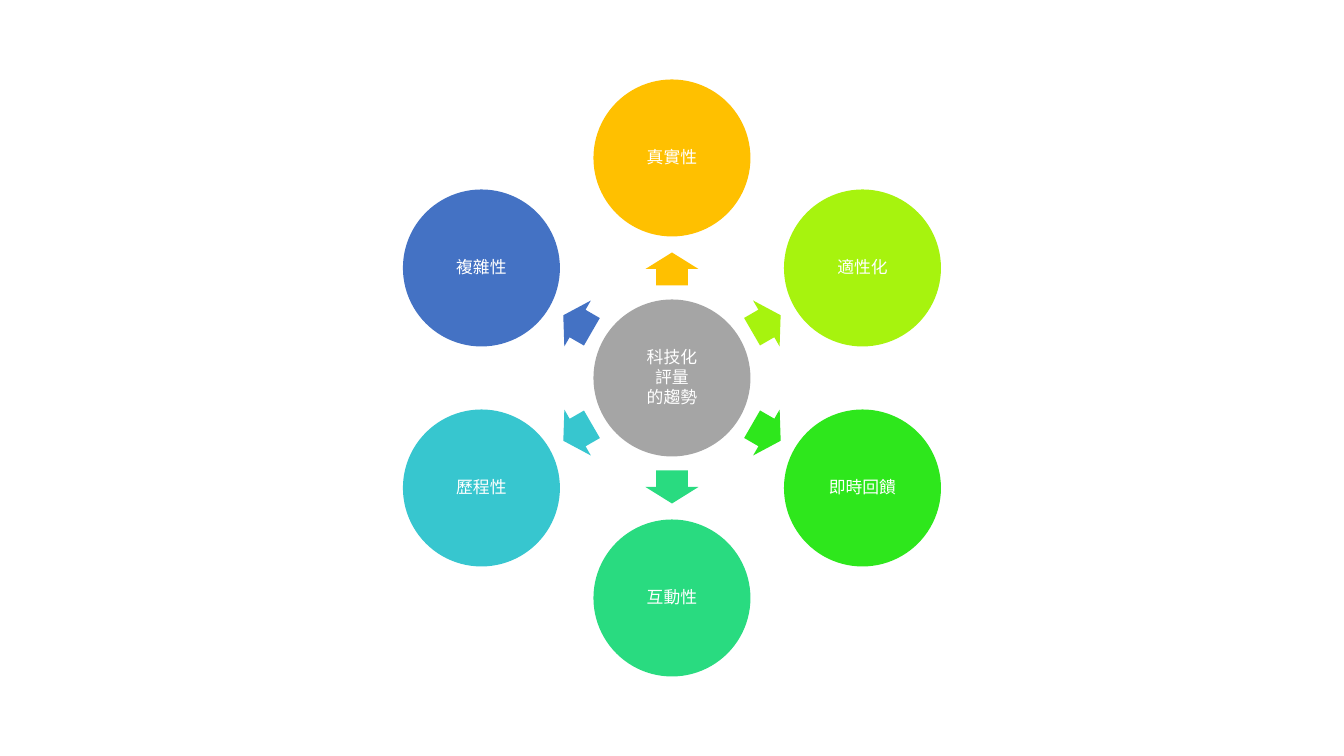
from math import cos, radians, sin

from lxml import etree
from pptx import Presentation
from pptx.dml.color import RGBColor
from pptx.enum.shapes import MSO_SHAPE
from pptx.enum.text import MSO_ANCHOR, PP_ALIGN
from pptx.oxml.ns import qn
from pptx.util import Emu, Pt

CIRCLE, ARROW = MSO_SHAPE.OVAL, MSO_SHAPE.RIGHT_ARROW
CENTER, MIDDLE = PP_ALIGN.CENTER, MSO_ANCHOR.MIDDLE
CJK, LATIN = "Noto Sans CJK SC", "Calibri"
PX = 914400 / 100.8


def color(hex_code):
    return RGBColor.from_string(hex_code)


def add_part(kind, middle_x, middle_y, width, height, fill, lines=(), font_name=CJK):
    part = slide.shapes.add_shape(
        kind,
        Emu(round((middle_x - width / 2) * PX)),
        Emu(round((middle_y - height / 2) * PX)),
        Emu(round(width * PX)),
        Emu(round(height * PX)),
    )
    part.shadow.inherit = False
    part.fill.solid()
    part.fill.fore_color.rgb = color(fill)
    part.line.fill.background()
    frame = part.text_frame
    inset = Emu(round(2 * PX))
    frame_format = {
        "word_wrap": True, "vertical_anchor": MIDDLE,
        "margin_left": inset, "margin_right": inset,
        "margin_top": inset, "margin_bottom": inset,
    }
    for attribute, value in frame_format.items():
        setattr(frame, attribute, value)
    for index, line in enumerate(lines):
        paragraph = frame.add_paragraph() if index else frame.paragraphs[0]
        paragraph_format = {"alignment": CENTER, "line_spacing": 0.9, "space_after": Pt(1.5)}
        for attribute, value in paragraph_format.items():
            setattr(paragraph, attribute, value)
        run = paragraph.add_run()
        run.text = line
        run.font.size = Pt(12)
        run.font.name = font_name
        run.font.color.rgb = color("FFFFFF")
        etree.SubElement(run.font._element, qn("a:ea"), typeface=CJK)
    return part


prs = Presentation()
prs.slide_width, prs.slide_height = Emu(round(1344 * PX)), Emu(round(756 * PX))
slide = prs.slides.add_slide(prs.slide_layouts[6])

hub_x, hub_y = 672, 378
diameter, trait_distance, arrow_distance = 157, 220, 109
arrow_length, arrow_width = 33, 53

add_part(CIRCLE, hub_x, hub_y, diameter, diameter, "A5A5A5", ["科技化", "評量", "的趨勢"])

traits = [
    ("真實性", "FFC000", CJK),
    ("適性化", "A7F30E", CJK),
    ("即時回饋", "2EE71C", CJK),
    ("互動性", "29DB80", CJK),
    ("歷程性", "37C6CF", LATIN),
    ("複雜性", "4472C4", LATIN),
]
for position, (trait, fill, font_name) in enumerate(traits):
    angle = position * 360 / len(traits) - 90
    across, down = cos(radians(angle)), sin(radians(angle))
    arrow = add_part(ARROW, hub_x + arrow_distance * across, hub_y + arrow_distance * down,
                     arrow_length, arrow_width, fill)
    arrow.rotation = angle % 360
    arrow.adjustments[0] = 0.6
    arrow.adjustments[1] = 0.5
    add_part(CIRCLE, hub_x + trait_distance * across, hub_y + trait_distance * down,
             diameter, diameter, fill, [trait], font_name)

prs.save("out.pptx")
